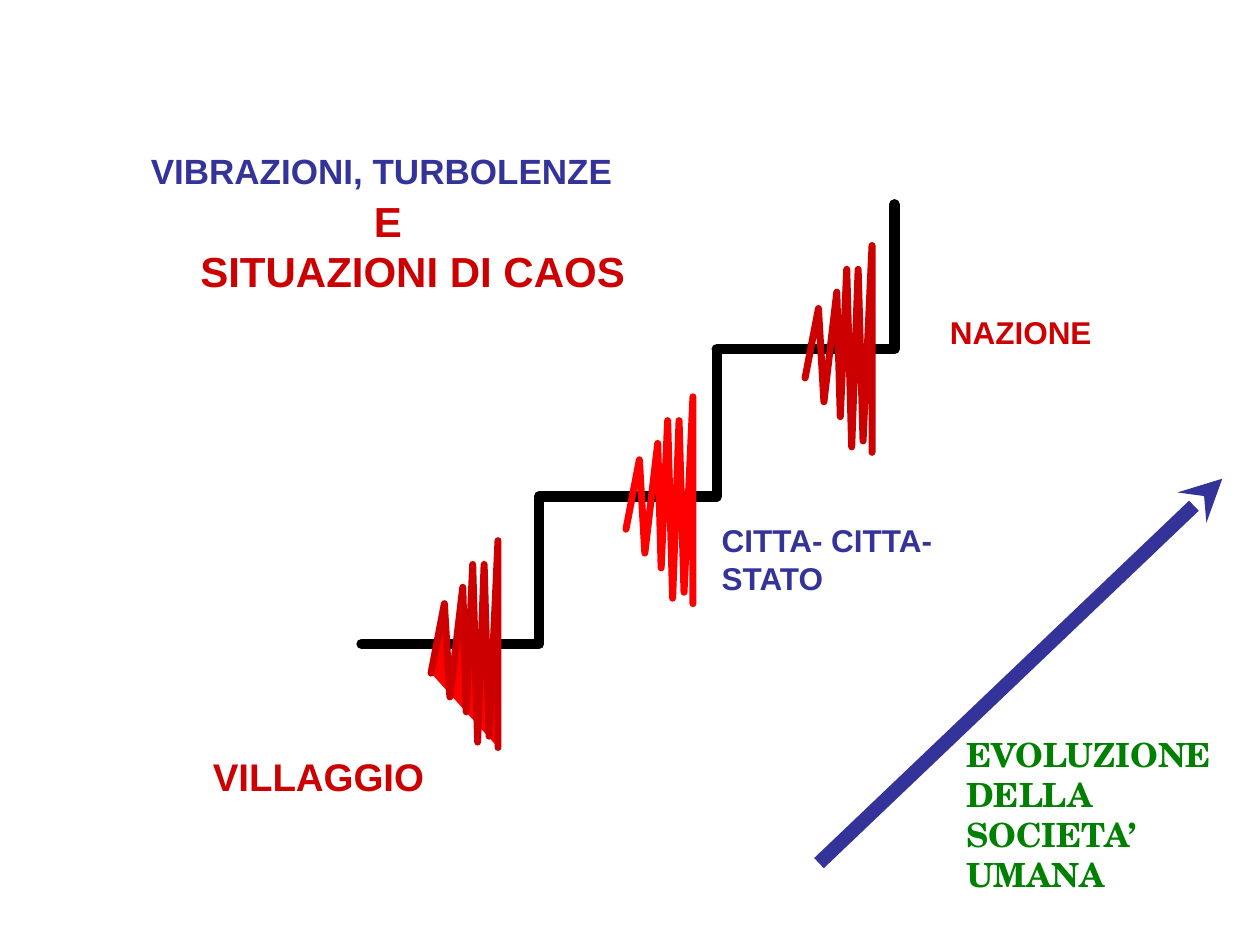
"""Build the slide on the evolution of human society as a rising staircase."""
from typing import NamedTuple

from lxml.etree import SubElement
from pptx import Presentation
from pptx.dml.color import RGBColor
from pptx.enum.shapes import MSO_CONNECTOR
from pptx.oxml.ns import qn
from pptx.util import Cm, Pt

BLUE, RED, BRIGHT_RED, GREEN, BLACK = "333399", "CC0000", "FF0000", "008000", "000000"
STEP_WIDTH, STEP_RISE, STEP_PITCH = 3.58, 2.92, 2.97
STAIR_LEFT, STAIR_BOTTOM = 7.29, 12.98
WAVE_POINTS = [
    (0, 2.67), (0.27, 1.27), (0.38, 3.15), (0.64, 0.94), (0.71, 3.45), (0.84, 0.48),
    (0.94, 4.06), (1.07, 0.48), (1.17, 3.94), (1.35, 0), (1.35, 4.17),
]


class Wave(NamedTuple):
    left: float
    top: float
    color: str
    fill: str | None = None


class Line(NamedTuple):
    text: str
    size: float
    color: str
    indent: float = 0
    space_before: float = 0


class Label(NamedTuple):
    left: float
    top: float
    width: float
    height: float
    lines: list[Line]
    font: str = "Arial"
    inset: tuple[float, float] = (0.15, 0.08)


WAVES = [
    Wave(12.62, 8, BRIGHT_RED),
    Wave(16.23, 4.95, RED),
    Wave(8.69, 10.9, RED, BRIGHT_RED),
]
LABELS = [
    Label(1.78, 15.09, 8.89, 1.09, [Line("VILLAGGIO", 22, RED, 2.36)]),
    Label(19.33, 14.73, 5.69, 3.4, [Line("EVOLUZIONE DELLA SOCIETA’ UMANA", 19, GREEN)],
          "TeX Gyre Schola"),
    Label(2.69, 1.93, 13.41, 5.08, [
        Line("VIBRAZIONI, TURBOLENZE", 20, BLUE, 0.2),
        Line("E", 24, RED, 4.7, 2),
        Line("SITUAZIONI DI CAOS", 24, RED, 1.2),
    ], inset=(0.15, 1.09)),
    Label(14.3, 10.31, 4.8, 1.78, [Line("CITTA- CITTA-STATO", 18, BLUE)], inset=(0.25, 0.2)),
    Label(18.9, 6.12, 3.99, 1.02, [Line("NAZIONE", 18, RED)], inset=(0.25, 0.2)),
]


def rgb(color: str) -> RGBColor:
    """Turn a hex string into a colour."""
    return RGBColor.from_string(color)


def style_line(shape, color: str, width: float):
    """Colour a line and return its XML element."""
    shape.line.color.rgb = rgb(color)
    shape.line.width = Pt(width)
    return shape._element.spPr.find(qn("a:ln"))


def draw_path(slide, points: list[tuple[float, float]], color: str, width: float,
              fill: str | None = None) -> None:
    """Draw an open path with round ends and joins."""
    start, *rest = [(Cm(x), Cm(y)) for x, y in points]
    builder = slide.shapes.build_freeform(*start)
    builder.add_line_segments(rest, close=False)
    shape = builder.convert_to_shape()
    shape.shadow.inherit = False
    if fill:
        shape.fill.solid()
        shape.fill.fore_color.rgb = rgb(fill)
    else:
        shape.fill.background()
    line = style_line(shape, color, width)
    line.set("cap", "rnd")
    SubElement(line, qn("a:round"))


def draw_step(slide, index: int) -> None:
    """Draw one tread and riser of the staircase."""
    left = STAIR_LEFT + index * STEP_WIDTH
    right = left + STEP_WIDTH
    bottom = STAIR_BOTTOM - index * STEP_PITCH
    draw_path(slide, [(left, bottom), (right, bottom), (right, bottom - STEP_RISE)], BLACK, 6)


def draw_wave(slide, wave: Wave) -> None:
    """Draw one growing vibration."""
    points = [(wave.left + x, wave.top + y) for x, y in WAVE_POINTS]
    draw_path(slide, points, wave.color, 4, wave.fill)


def draw_arrow(slide) -> None:
    """Draw the rising arrow of evolution."""
    arrow = slide.shapes.add_connector(
        MSO_CONNECTOR.STRAIGHT, Cm(16.51), Cm(17.4), Cm(24.64), Cm(9.65))
    line = style_line(arrow, BLUE, 8)
    SubElement(line, qn("a:tailEnd"), type="stealth")
    SubElement(arrow._element.spPr, qn("a:effectLst"))


def draw_label(slide, label: Label) -> None:
    """Draw a text box with one paragraph for each line."""
    box = slide.shapes.add_textbox(
        Cm(label.left), Cm(label.top), Cm(label.width), Cm(label.height))
    frame = box.text_frame
    frame.word_wrap = True
    frame.margin_left = frame.margin_right = Cm(label.inset[0])
    frame.margin_top, frame.margin_bottom = Cm(label.inset[1]), Cm(0.08)
    frame.text = "\n".join(line.text for line in label.lines)
    for paragraph, line in zip(frame.paragraphs, label.lines):
        paragraph.space_before = Pt(line.space_before)
        paragraph._p.get_or_add_pPr().set("marL", str(Cm(line.indent)))
        font = paragraph.runs[0].font
        font.name, font.size, font.bold = label.font, Pt(line.size), True
        font.color.rgb = rgb(line.color)


def main() -> None:
    """Build and save the presentation."""
    presentation = Presentation()
    presentation.slide_width, presentation.slide_height = Cm(25.4), Cm(19.05)
    slide = presentation.slides.add_slide(presentation.slide_layouts[6])
    for index in range(3):
        draw_step(slide, index)
    for wave in WAVES:
        draw_wave(slide, wave)
    draw_arrow(slide)
    for label in LABELS:
        draw_label(slide, label)
    presentation.save("out.pptx")


if __name__ == "__main__":
    main()
